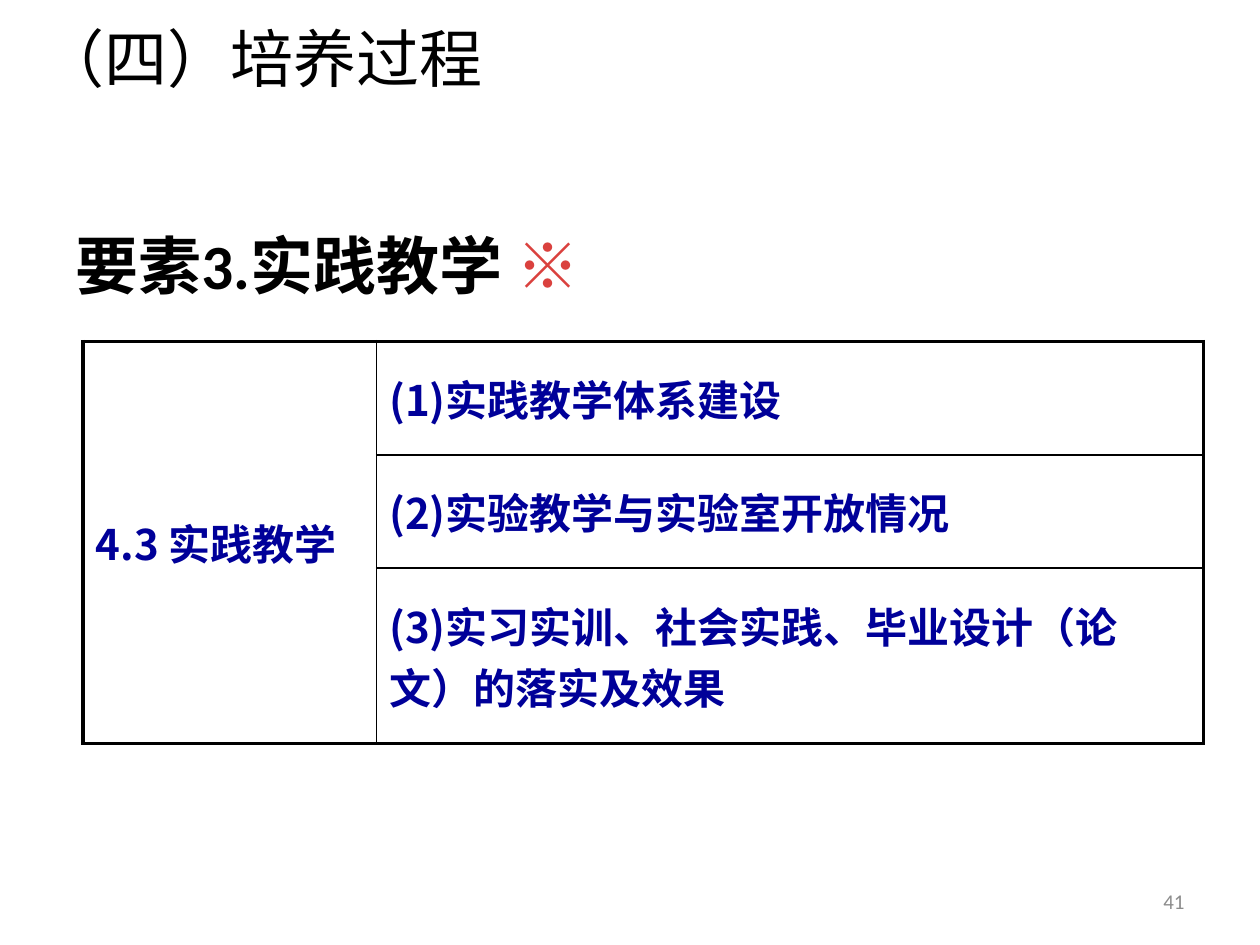
from lxml.etree import SubElement
from pptx import Presentation
from pptx.dml.color import RGBColor
from pptx.enum.text import MSO_ANCHOR, PP_ALIGN
from pptx.oxml.ns import qn
from pptx.util import Inches, Pt

BLACK, BLUE, RED, GRAY = "000000", "000099", "DA413E", "8C8C8C"
CJK = "Noto Sans CJK SC"
THIN, THICK = 1, 2.25


def color(value):
    return RGBColor.from_string(value)


def add_run(p, text, size=36, font="Calibri", fill=BLACK, bold=False):
    r = p.add_run()
    r.text = text
    r.font.size = Pt(size)
    r.font.name = font
    r.font.bold = bold
    r.font.color.rgb = color(fill)
    SubElement(r.font._element, qn("a:ea"), typeface=CJK)
    return r


def add_text_box(s, left, top, width, height, anchor=MSO_ANCHOR.MIDDLE):
    tf = s.shapes.add_textbox(Inches(left), Inches(top),
                              Inches(width), Inches(height)).text_frame
    tf.word_wrap = True
    tf.vertical_anchor = anchor
    return tf.paragraphs[0]


def add_text_shadow(r):
    effects = SubElement(r.font._element, qn("a:effectLst"))
    r.font._element.find(qn("a:solidFill")).addnext(effects)
    shadow = SubElement(effects, qn("a:outerShdw"), blurRad="38100",
                        dist="38100", dir="2700000", algn="tl")
    shade = SubElement(shadow, qn("a:srgbClr"), val=BLACK)
    SubElement(shade, qn("a:alpha"), val="43000")


def set_borders(cell, left, right, top, bottom):
    tcPr = cell._tc.get_or_add_tcPr()
    for side, width in zip("LRTB", (left, right, top, bottom)):
        ln = SubElement(tcPr, qn(f"a:ln{side}"), w=str(Pt(width)))
        fill = SubElement(ln, qn("a:solidFill"))
        SubElement(fill, qn("a:srgbClr"), val=BLACK)


def fill_cell(cell, text):
    cell.vertical_anchor = MSO_ANCHOR.MIDDLE
    cell.margin_left = cell.margin_right = Inches(0.1)
    cell.margin_top = cell.margin_bottom = Inches(0.21)
    add_run(cell.text_frame.paragraphs[0], text, size=24, font=CJK,
            fill=BLUE, bold=True)


def add_criteria_table(s, heading, items):
    widths, heights = (2.33, 6.56), (0.9, 0.9, 1.39)
    table = s.shapes.add_table(len(items), 2, Inches(0.66), Inches(2.71),
                               Inches(sum(widths)),
                               Inches(sum(heights))).table
    table.first_row = table.horz_banding = False
    for column, width in zip(table.columns, widths):
        column.width = Inches(width)
    last = len(items) - 1
    for i, (item, height) in enumerate(zip(items, heights)):
        table.rows[i].height = Inches(height)
        top = THICK if i == 0 else THIN
        bottom = THICK if i == last else THIN
        set_borders(table.cell(i, 0), THICK, THIN, THICK, THICK)
        set_borders(table.cell(i, 1), THIN, THICK, top, bottom)
        for j in range(2):
            table.cell(i, j).fill.background()
        fill_cell(table.cell(i, 1), item)
    table.cell(0, 0).merge(table.cell(last, 0))
    fill_cell(table.cell(0, 0), heading)


def main():
    prs = Presentation()
    prs.slide_width, prs.slide_height = Inches(10), Inches(7.5)
    s = prs.slides.add_slide(prs.slide_layouts[6])

    # Title
    p = add_text_box(s, 0.23, -0.27, 8.54, 1.45)
    add_text_shadow(add_run(p, "（四）培养过程"))

    # Element heading
    p = add_text_box(s, 0.5, 1.75, 9, 4.95, MSO_ANCHOR.TOP)
    add_run(p, "要素3.实践教学 ", bold=True)
    add_run(p, "※", fill=RED, bold=True)

    # Criteria table
    add_criteria_table(s, "4.3 实践教学", [
        "(1)实践教学体系建设",
        "(2)实验教学与实验室开放情况",
        "(3)实习实训、社会实践、毕业设计（论文）的落实及效果",
    ])

    # Page number
    p = add_text_box(s, 7.17, 6.95, 2.33, 0.4)
    p.alignment = PP_ALIGN.RIGHT
    add_run(p, "41", size=12, fill=GRAY)

    prs.save("out.pptx")


if __name__ == "__main__":
    main()
